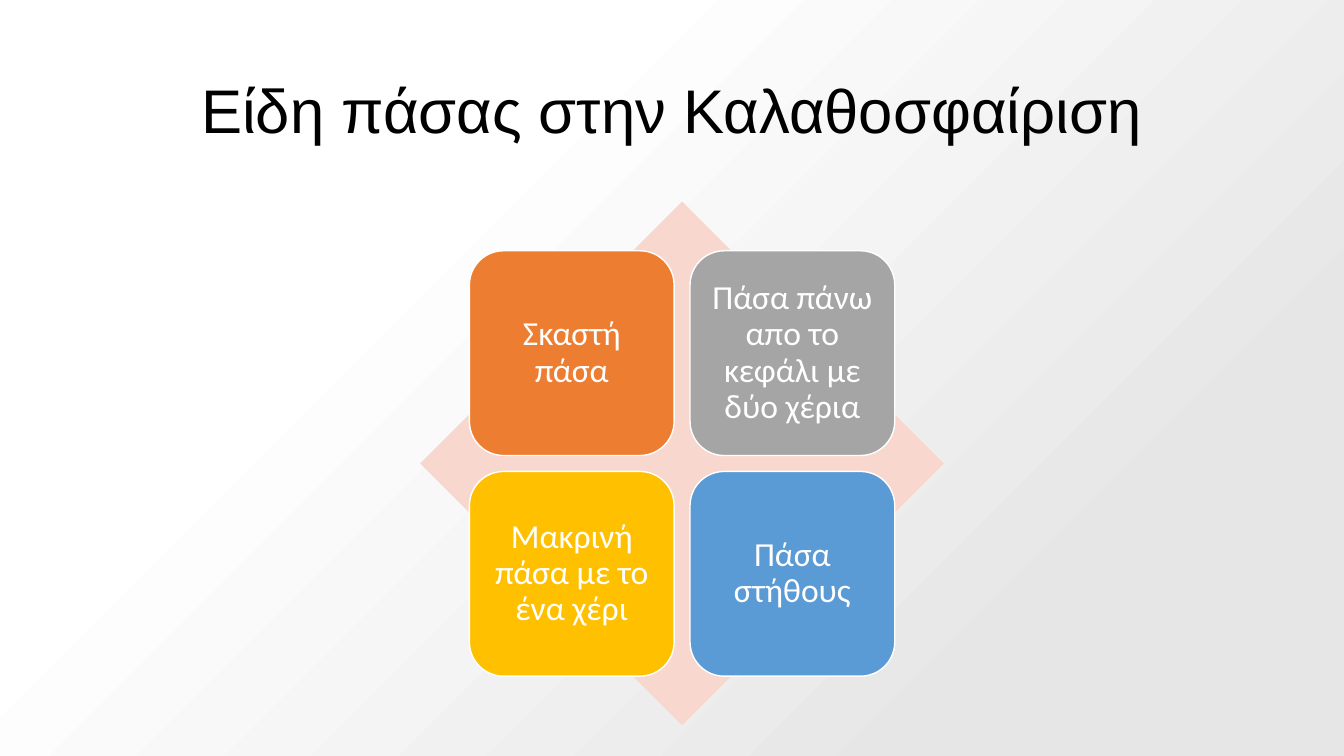
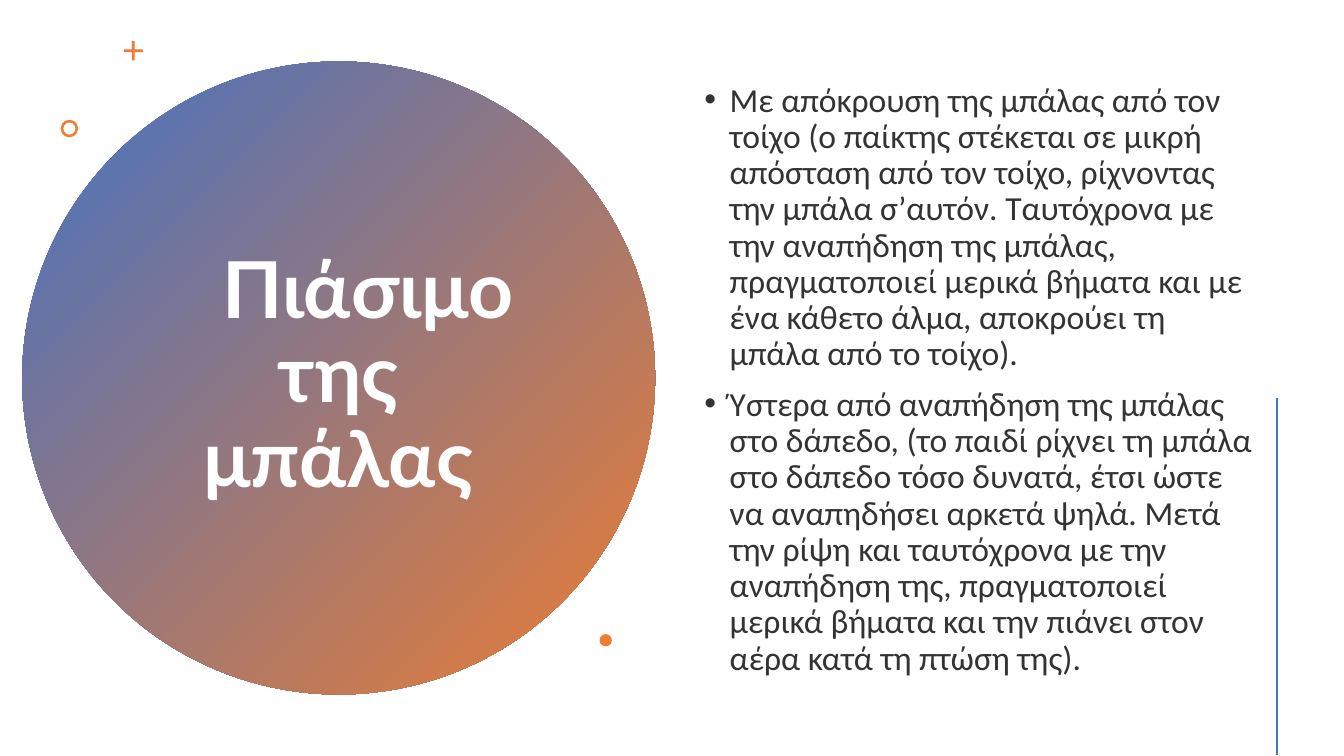
from lxml import etree
from pptx import Presentation
from pptx import util as u
from pptx.dml.color import RGBColor
from pptx.enum import shapes, text
from pptx.oxml.ns import qn

Cm, Pt = u.Cm, u.Pt
KIND = shapes.MSO_SHAPE
HUES = {
    "white": "FFFFFF", "black": "000000", "ink": "333333", "mist": "E7E6E6",
    "blush": "F8D7CE", "orange": "ED7D31", "grey": "A5A5A5",
    "gold": "FFC000", "sky": "5B9BD5", "blue": "4472C4",
}
TILES = [
    ("Σκαστή πάσα", "orange"),
    ("Πάσα πάνω απο το κεφάλι με δύο χέρια", "grey"),
    ("Μακρινή πάσα με το ένα χέρι", "gold"),
    ("Πάσα στήθους", "sky"),
]
POINTS = [
    "Με απόκρουση της μπάλας από τον τοίχο (ο παίκτης στέκεται σε μικρή "
    "απόσταση από τον τοίχο, ρίχνοντας την μπάλα σ’αυτόν. Ταυτόχρονα με την "
    "αναπήδηση της μπάλας, πραγματοποιεί μερικά βήματα και με ένα κάθετο "
    "άλμα, αποκρούει τη μπάλα από το τοίχο).",
    "Ύστερα από αναπήδηση της μπάλας στο δάπεδο, (το παιδί ρίχνει τη μπάλα "
    "στο δάπεδο τόσο δυνατά, έτσι ώστε να αναπηδήσει αρκετά ψηλά. Μετά την "
    "ρίψη και ταυτόχρονα με την αναπήδηση της, πραγματοποιεί μερικά βήματα "
    "και την πιάνει στον αέρα κατά τη πτώση της).",
]


def hue(name):
    """Return the named colour."""
    return RGBColor.from_string(HUES[name])


def blend(fill, *stops):
    """Fill with a diagonal gradient from top left to bottom right."""
    fill.gradient()
    fill.gradient_angle = 315
    for stop, (place, name) in zip(fill.gradient_stops, stops):
        stop.position = place
        stop.color.rgb = hue(name)


def style(para, size, color, face="Calibri", bold=False, align=text.PP_ALIGN.CENTER):
    """Format one paragraph."""
    para.alignment = align
    para.line_spacing = 0.9
    font = para.font
    font.size, font.name, font.bold = Pt(size), face, bold
    font.color.rgb = hue(color)


def shape(slide, kind, box, fill=None):
    """Add a plain shape without outline or shadow."""
    item = slide.shapes.add_shape(kind, *map(Cm, box))
    item.shadow.inherit = False
    item.line.fill.background()
    if fill:
        item.fill.solid()
        item.fill.fore_color.rgb = hue(fill)
    return item


def head(slide, words, box, *look):
    """Place and format the title; return it."""
    title = slide.shapes.title
    title.left, title.top, title.width, title.height = map(Cm, box)
    frame = title.text_frame
    frame.text = words
    frame.word_wrap = True
    frame.auto_size = text.MSO_AUTO_SIZE.NONE
    frame.vertical_anchor = text.MSO_ANCHOR.MIDDLE
    style(frame.paragraphs[0], *look)
    return title


def matrix(slide, left, top, side):
    """Draw a diamond with four tiles centred on it."""
    shape(slide, KIND.DIAMOND, (left, top, side, side), "blush")
    tile, gap = 5.16, 0.4
    inset = (side - 2 * tile - gap) / 2
    for i, (words, fill) in enumerate(TILES):
        row, col = divmod(i, 2)
        x = left + inset + col * (tile + gap)
        y = top + inset + row * (tile + gap)
        card = shape(slide, KIND.ROUNDED_RECTANGLE, (x, y, tile, tile), fill)
        card.line.color.rgb = hue("white")
        card.line.width = Pt(1)
        frame = card.text_frame
        frame.text = words
        frame.word_wrap = True
        frame.vertical_anchor = text.MSO_ANCHOR.MIDDLE
        frame.margin_left = frame.margin_right = Cm(0.25)
        frame.margin_top = frame.margin_bottom = Cm(0.25)
        style(frame.paragraphs[0], 24, "white")


def disc(slide, left, top, side):
    """Draw the title disc with its small ornaments."""
    ball = shape(slide, KIND.OVAL, (left, top, side, side))
    blend(ball.fill, (0, "blue"), (1, "orange"))
    title = head(slide, "Πιάσιμο της μπάλας",
                 (left + 2.9, top + 2.03, 10.13, 11.86), 56, "white", "Lato", True)
    title.text_frame.paragraphs[0]._p.get_or_add_pPr().set("indent", str(Cm(1.5)))
    title.element.addprevious(ball.element)
    for kind, x, y, size, adjust in (
        (KIND.CROSS, 2.56, -0.51, 0.48, 0.43),
        (KIND.DONUT, 0.97, 1.47, 0.44, 0.15),
        (KIND.OVAL, 14.55, 14.43, 0.31, None),
    ):
        mark = shape(slide, kind, (left + x, top + y, size, size), "orange")
        if adjust:
            mark.adjustments[0] = adjust


def notes(slide, *box):
    """Write the bulleted points in a box."""
    frame = slide.shapes.add_textbox(*map(Cm, box)).text_frame
    frame.word_wrap = True
    frame.vertical_anchor = text.MSO_ANCHOR.MIDDLE
    frame.text = "\n".join(POINTS)
    for para in frame.paragraphs:
        style(para, 24, "ink", align=text.PP_ALIGN.LEFT)
        para.space_before = Pt(10)
        props = para._p.get_or_add_pPr()
        props.set("marL", str(Cm(0.64)))
        props.set("indent", str(-Cm(0.64)))
        bullet = etree.Element(qn("a:buChar"), char="•")
        face = etree.Element(qn("a:buFont"), typeface="Arial")
        props.find(qn("a:defRPr")).addprevious(face)
        face.addnext(bullet)


def rule(slide, x, top, end):
    """Draw the upright line at the right."""
    line = slide.shapes.add_connector(
        shapes.MSO_CONNECTOR.STRAIGHT, Cm(x), Cm(top), Cm(x), Cm(end))
    line.line.color.rgb = hue("blue")
    line.line.width = Pt(2)
    etree.SubElement(line.element.spPr, qn("a:effectLst"))


def kinds(slide):
    """Build the slide on kinds of passes."""
    blend(slide.background.fill, (0.3, "white"), (0.8, "mist"))
    head(slide, "Είδη πάσας στην Καλαθοσφαίριση",
         (2.33, 1.02, 29.21, 3.68), 44, "black", "Arial")
    matrix(slide, 10.59, 5.08, 13.2)


def catch(slide):
    """Build the slide on catching the ball."""
    disc(slide, 0.56, 1.55, 15.95)
    notes(slide, 17.5, 1.45, 14.45, 16.26)
    rule(slide, 32.18, 10.03, 19.02)


def main():
    """Build and save the deck."""
    deck = Presentation()
    deck.slide_width, deck.slide_height = Cm(33.87), Cm(19.05)
    for build in (kinds, catch):
        build(deck.slides.add_slide(deck.slide_layouts[5]))
    deck.save("out.pptx")


if __name__ == "__main__":
    main()
